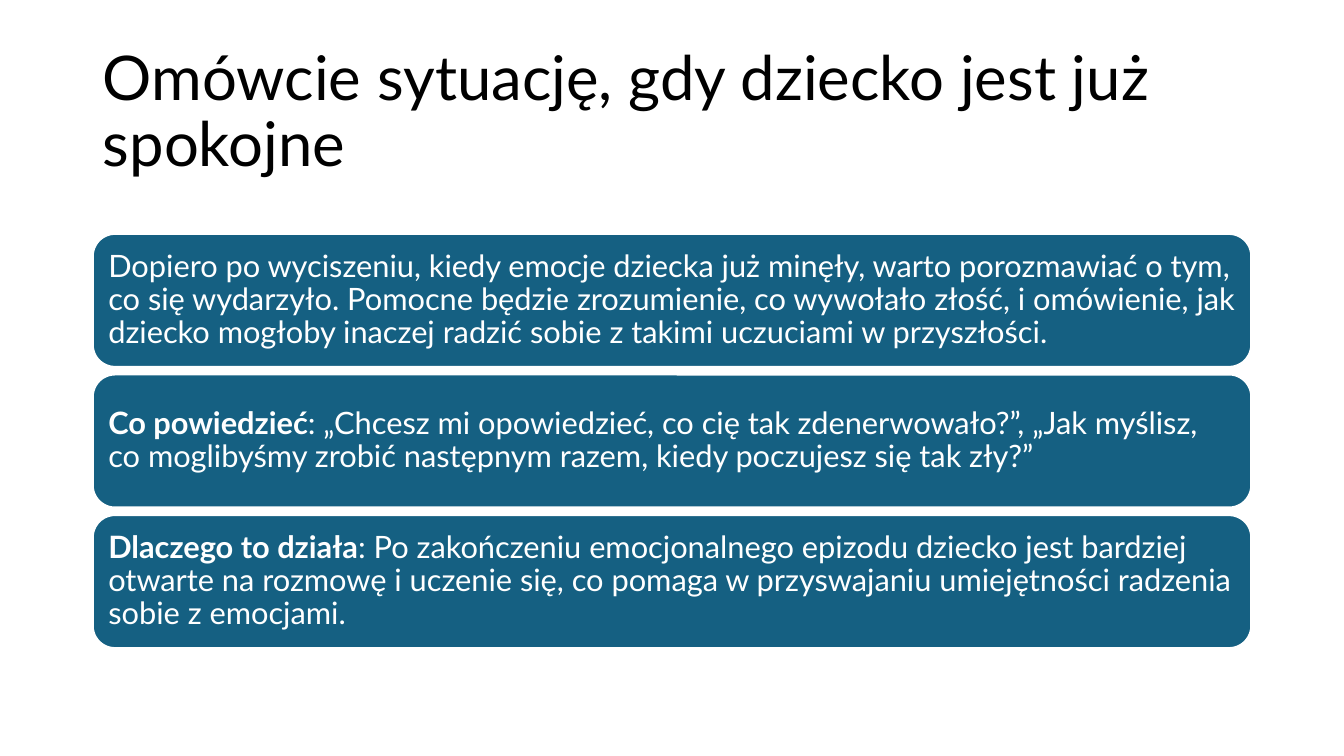
import pptx
import pptx.util
import pptx.dml.color
import pptx.enum.shapes
import pptx.enum.text

WHITE = pptx.dml.color.RGBColor(0xFF, 0xFF, 0xFF)
BLACK = pptx.dml.color.RGBColor(0x00, 0x00, 0x00)
TEAL = pptx.dml.color.RGBColor(0x15, 0x60, 0x82)

FONT = "Lato"
SLIDE_WIDTH = pptx.util.Inches(13.33)
SLIDE_HEIGHT = pptx.util.Inches(7.5)
MARGIN = pptx.util.Inches(0.92)
CONTENT_WIDTH = SLIDE_WIDTH - 2 * MARGIN
FIRST_ROW = pptx.util.Inches(2.32)
ROW_STEP = pptx.util.Inches(1.395)
CARD_HEIGHT = pptx.util.Inches(1.32)

HEADING = "Omówcie sytuację, gdy dziecko jest już spokojne"
ADVICE = [
    ("", "Dopiero po wyciszeniu, kiedy emocje dziecka już minęły, warto porozmawiać "
         "o tym, co się wydarzyło. Pomocne będzie zrozumienie, co wywołało złość, "
         "i omówienie, jak dziecko mogłoby inaczej radzić sobie z takimi uczuciami "
         "w przyszłości."),
    ("Co powiedzieć", ": „Chcesz mi opowiedzieć, co cię tak zdenerwowało?”, „Jak myślisz, "
                      "co moglibyśmy zrobić następnym razem, kiedy poczujesz się tak zły?”"),
    ("Dlaczego to działa", ": Po zakończeniu emocjonalnego epizodu dziecko jest bardziej "
                           "otwarte na rozmowę i uczenie się, co pomaga w przyswajaniu "
                           "umiejętności radzenia sobie z emocjami."),
]


def write(frame, text, lead="", size=22, color=WHITE, inset=0.09):
    frame.word_wrap = True
    frame.auto_size = pptx.enum.text.MSO_AUTO_SIZE.NONE
    frame.vertical_anchor = pptx.enum.text.MSO_ANCHOR.MIDDLE
    frame.margin_left = frame.margin_right = pptx.util.Inches(inset)
    frame.margin_top = frame.margin_bottom = pptx.util.Inches(inset)
    paragraph = frame.paragraphs[0]
    paragraph.alignment = pptx.enum.text.PP_ALIGN.LEFT
    paragraph.line_spacing = 0.9
    for words, bold in ((lead, True), (text, False)):
        if words:
            run = paragraph.add_run()
            run.text = words
            run.font.name = FONT
            run.font.size = pptx.util.Pt(size)
            run.font.bold = bold
            run.font.color.rgb = color


def add_heading(slide, text):
    heading = slide.shapes.title
    heading.left, heading.top = MARGIN, pptx.util.Inches(0.4)
    heading.width, heading.height = CONTENT_WIDTH, pptx.util.Inches(1.45)
    write(heading.text_frame, text, size=44, color=BLACK, inset=0.1)


def add_card(slide, row, lead, text):
    card = slide.shapes.add_shape(
        pptx.enum.shapes.MSO_SHAPE.ROUNDED_RECTANGLE,
        MARGIN, FIRST_ROW + row * ROW_STEP, CONTENT_WIDTH, CARD_HEIGHT)
    card.shadow.inherit = False
    card.fill.solid()
    card.fill.fore_color.rgb = TEAL
    card.line.color.rgb = WHITE
    card.line.width = pptx.util.Pt(1.5)
    write(card.text_frame, text, lead=lead)


def main():
    presentation = pptx.Presentation()
    presentation.slide_width = SLIDE_WIDTH
    presentation.slide_height = SLIDE_HEIGHT
    slide = presentation.slides.add_slide(presentation.slide_layouts[5])
    add_heading(slide, HEADING)
    for row, (lead, text) in enumerate(ADVICE):
        add_card(slide, row, lead, text)
    presentation.save("out.pptx")


if __name__ == "__main__":
    main()
